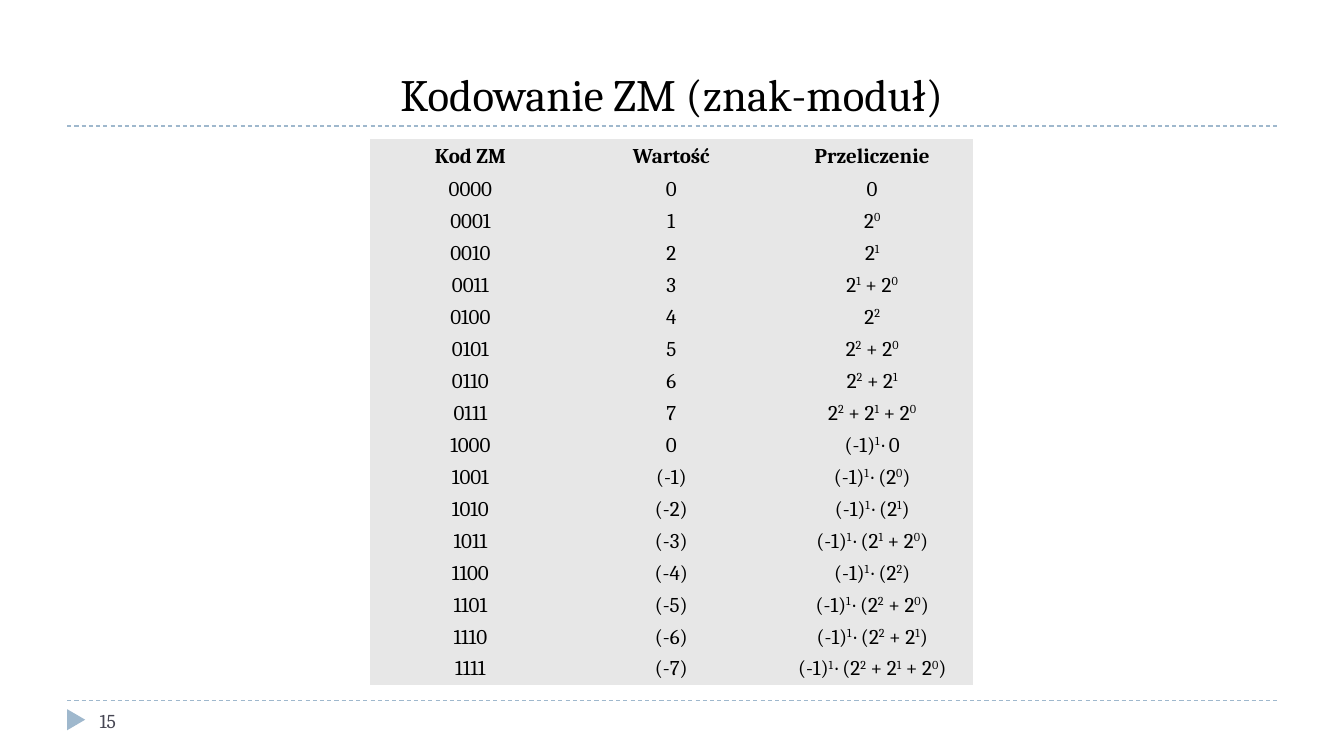
from dataclasses import dataclass

import pptx
import pptx.dml.color
import pptx.enum.dml
import pptx.enum.shapes
import pptx.enum.text
import pptx.oxml.ns
import pptx.oxml.xmlchemy
import pptx.util
from lxml import etree

BLACK = pptx.dml.color.RGBColor(0x00, 0x00, 0x00)
SLATE = pptx.dml.color.RGBColor(0x46, 0x46, 0x53)
BLUE = pptx.dml.color.RGBColor(0x9F, 0xB8, 0xCD)
GREY = pptx.dml.color.RGBColor(0xE7, 0xE7, 0xE7)

WIDTH = pptx.util.Inches(13.333)
HEIGHT = pptx.util.Inches(7.5)
COLUMNS, ROWS = 400, 225
BITS = 4
HEADINGS = ("Kod ZM", "Wartość", "Przeliczenie")
NO_STYLE = "{2D5ABB26-0587-4C30-8999-92F81FD0307C}"
CENTER = pptx.enum.text.PP_ALIGN.CENTER
MIDDLE = pptx.enum.text.MSO_ANCHOR.MIDDLE


@dataclass(frozen=True)
class Box:
    col: float
    row: float
    cols: float
    rows: float

    def place(self) -> dict[str, int]:
        return {"left": across(self.col), "top": down(self.row),
                "width": across(self.cols), "height": down(self.rows)}


@dataclass(frozen=True)
class Code:
    bits: str
    value: str
    sum: str


TITLE = Box(20, 5, 360, 32.5)
NUMBER = Box(26.7, 208.5, 86.7, 12)
MARKER = Box(19.5, 211.5, 6.3, 5.4)
TABLE = Box(110.1, 41.4, 179.4, 162.68)
HEADER_ROWS = 10.2
RULES = (37.5, 208.5)


def across(cols: float) -> int:
    return round(WIDTH * cols / COLUMNS)


def down(rows: float) -> int:
    return round(HEIGHT * rows / ROWS)


def apply(target: object, values: dict) -> None:
    for name, value in values.items():
        setattr(target, name, value)


def sign_magnitude(n: int) -> Code:
    bits = f"{n:0{BITS}b}"
    size = int(bits[1:], 2)
    powers = [f"2^{k}^" for k in reversed(range(BITS - 1)) if size >> k & 1]
    total = " + ".join(powers) or "0"
    if bits[0] == "0":
        return Code(bits, str(size), total)
    factor = f"({total})" if powers else total
    return Code(bits, f"(-{size})" if size else "0", f"(-1)^1 ^· {factor}")


def write(tf, text: str, size: float, color, bold: bool = False, align=None) -> None:
    p = tf.paragraphs[0]
    p.alignment = align
    for i, part in enumerate(text.split("^")):
        if not part:
            continue
        r = p.add_run()
        r.text = part
        apply(r.font, {"name": "Cambria", "size": pptx.util.Pt(size), "bold": bold})
        r.font.color.rgb = color
        if i % 2:
            r._r.get_or_add_rPr().set("baseline", "30000")


def add_rule(s, row: float) -> None:
    y = down(row)
    line = s.shapes.add_connector(
        pptx.enum.shapes.MSO_CONNECTOR.STRAIGHT,
        across(TITLE.col), y, across(TITLE.col + TITLE.cols), y)
    apply(line.line, {"width": pptx.util.Pt(0.75),
                      "dash_style": pptx.enum.dml.MSO_LINE.DASH})
    line.line.color.rgb = BLUE
    etree.SubElement(line._element.spPr, pptx.oxml.ns.qn("a:effectLst"))


def add_marker(s) -> None:
    sp = s.shapes.add_shape(
        pptx.enum.shapes.MSO_SHAPE.ISOSCELES_TRIANGLE, **MARKER.place())
    sp.rotation = 90
    sp.shadow.inherit = False
    sp.fill.solid()
    sp.fill.fore_color.rgb = BLUE
    sp.line.fill.background()


def add_codes(s, codes: list[Code]) -> None:
    lines = [HEADINGS] + [(c.bits, c.value, c.sum) for c in codes]
    table = s.shapes.add_table(len(lines), len(HEADINGS), **TABLE.place()).table
    apply(table, {"first_row": False, "horz_banding": False})
    table._tbl.tblPr[0].text = NO_STYLE
    for column in table.columns:
        column.width = across(TABLE.cols / len(HEADINGS))
    margin = pptx.util.Inches(0.03)
    sides = ("margin_left", "margin_top", "margin_right", "margin_bottom")
    cell_format = dict.fromkeys(sides, margin) | {"vertical_anchor": MIDDLE}
    for i, line in enumerate(lines):
        body_rows = (TABLE.rows - HEADER_ROWS) / len(codes)
        table.rows[i].height = down(body_rows if i else HEADER_ROWS)
        for j, text in enumerate(line):
            cell = table.cell(i, j)
            apply(cell, cell_format)
            cell.fill.solid()
            cell.fill.fore_color.rgb = GREY
            write(cell.text_frame, text, 15, BLACK, bold=i == 0, align=CENTER)


def main() -> None:
    prs = pptx.Presentation()
    apply(prs, {"slide_width": WIDTH, "slide_height": HEIGHT})
    s = prs.slides.add_slide(prs.slide_layouts.get_by_name("Title Only"))
    for row in RULES:
        add_rule(s, row)
    add_marker(s)

    title = s.shapes.title
    apply(title, TITLE.place())
    apply(title.text_frame, {"vertical_anchor": pptx.enum.text.MSO_ANCHOR.BOTTOM,
                             "word_wrap": True})
    write(title.text_frame, "Kodowanie ZM (znak-moduł)", 32, BLACK, align=CENTER)

    number = s.shapes.add_textbox(**NUMBER.place())
    apply(number.text_frame, {"vertical_anchor": MIDDLE, "word_wrap": True})
    write(number.text_frame, "15", 14, SLATE)

    add_codes(s, [sign_magnitude(n) for n in range(2 ** BITS)])
    prs.save("out.pptx")


if __name__ == "__main__":
    main()
